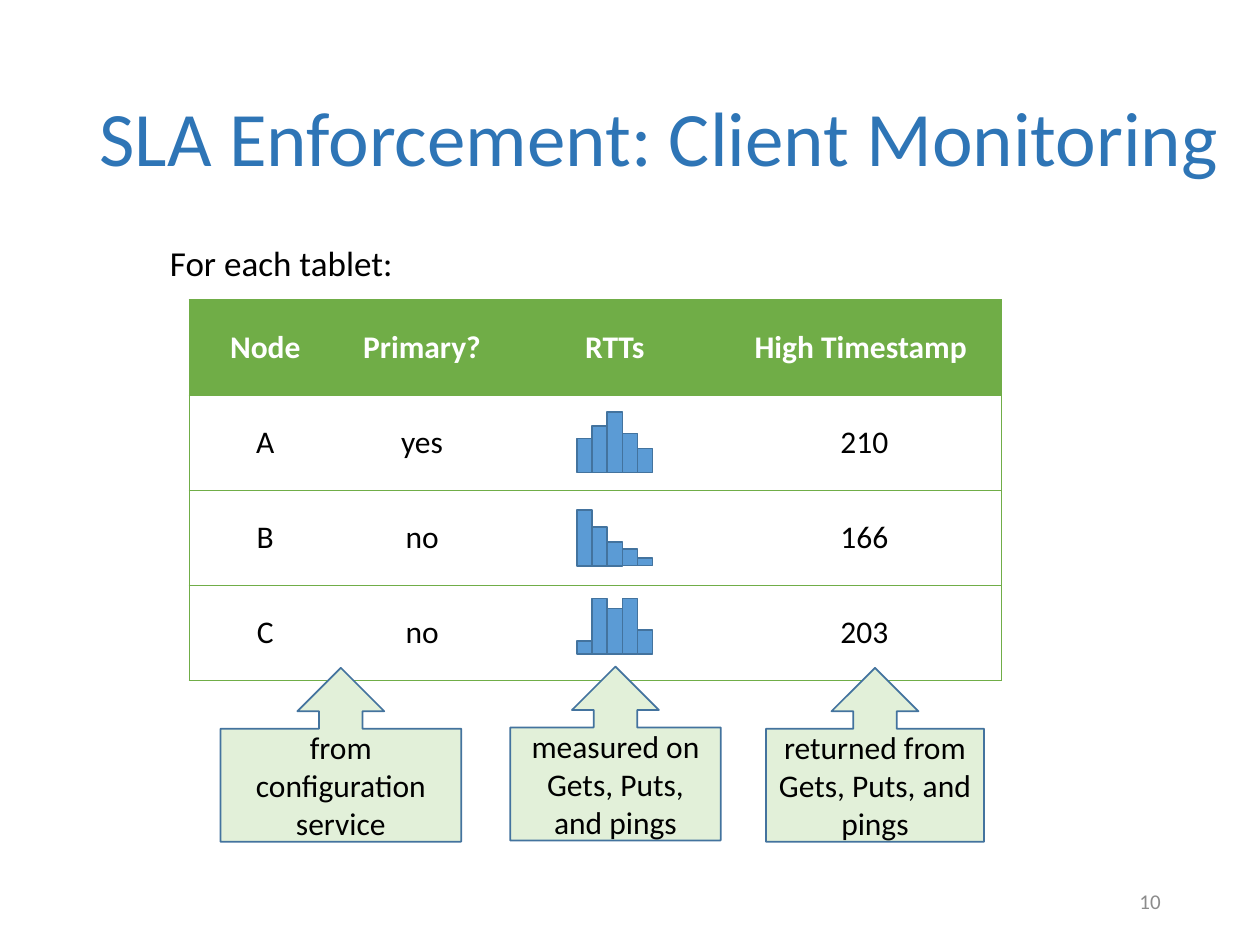
from dataclasses import dataclass
from lxml.etree import SubElement
from pptx import Presentation
from pptx.dml.color import RGBColor
from pptx.enum.shapes import MSO_SHAPE as Shape
from pptx.enum.text import MSO_ANCHOR as Anchor, PP_ALIGN as Align
from pptx.oxml import parse_xml
from pptx.oxml.ns import nsdecls, qn
from pptx.util import Inches, Pt


@dataclass(frozen=True)
class Theme:
    font: str = "Calibri"
    title: str = "2E75B6"
    text: str = "000000"
    white: str = "FFFFFF"
    muted: str = "8C8C8C"
    green: str = "70AD47"
    callout: str = "E2F0D9"
    bar: str = "5B9BD5"
    outline: str = "43739E"
    title_size: int = 44
    lead_size: int = 20
    body_size: int = 18
    small_size: int = 12


T = Theme()

ROWS = [
    ("Node", "Primary?", "RTTs", "High Timestamp "),
    ("A", "yes", "", "210"),
    ("B", "no", "", "166"),
    ("C", "no", "", "203"),
]
COL_WIDTHS = (1.21, 1.28, 1.78, 2.18)
BAR_WIDTH = 0.12
HISTOGRAMS = [
    (3.75, (0.27, 0.37, 0.48, 0.31, 0.19)),
    (4.49, (0.44, 0.31, 0.19, 0.13, 0.06)),
    (5.19, (0.1, 0.44, 0.36, 0.44, 0.19)),
]
CALLOUTS = [
    ("from configuration service", 1.75, 5.3, 1.91),
    ("measured on Gets, Puts, and pings", 4.05, 5.29, 1.67),
    ("returned from Gets, Puts, and pings", 6.08, 5.3, 1.73),
]


def rgb(color):
    return RGBColor.from_string(color)


def write(tf, text, size=T.body_size, color=T.text, bold=False,
          align=Align.LEFT, anchor=Anchor.MIDDLE, wrap=True, spacing=None):
    tf.word_wrap = wrap
    tf.vertical_anchor = anchor
    p = tf.paragraphs[0]
    p.alignment = align
    p.line_spacing = spacing
    r = p.add_run()
    r.text = text
    r.font.name = T.font
    r.font.size = Pt(size)
    r.font.bold = bold
    r.font.color.rgb = rgb(color)


def add_title(slide, text):
    sp = slide.shapes.title
    sp.left, sp.top = Inches(0.69), Inches(0.4)
    sp.width, sp.height = Inches(9.17), Inches(1.45)
    write(sp.text_frame, text, size=T.title_size, color=T.title, spacing=0.9)


def add_text(slide, text, left, top, width, height, **fmt):
    sp = slide.shapes.add_textbox(
        Inches(left), Inches(top), Inches(width), Inches(height))
    write(sp.text_frame, text, **fmt)


def add_box(shapes, kind, left, top, width, height, fill):
    sp = shapes.add_shape(
        kind, Inches(left), Inches(top), Inches(width), Inches(height))
    sp.shadow.inherit = False
    sp.fill.solid()
    sp.fill.fore_color.rgb = rgb(fill)
    sp.line.color.rgb = rgb(T.outline)
    sp.line.width = Pt(1)
    return sp


def set_borders(cell, visible):
    tc_pr = cell._tc.get_or_add_tcPr()
    for i, side in enumerate("LRTB"):
        ln = parse_xml(f'<a:ln{side} {nsdecls("a")} w="{Pt(0.5)}"/>')
        if side in visible:
            fill = SubElement(ln, qn("a:solidFill"))
            SubElement(fill, qn("a:srgbClr"), val=T.green)
        else:
            SubElement(ln, qn("a:noFill"))
        tc_pr.insert(i, ln)


def add_node_table(slide):
    last = len(COL_WIDTHS) - 1
    table = slide.shapes.add_table(
        len(ROWS), len(COL_WIDTHS), Inches(1.5), Inches(2.38),
        Inches(sum(COL_WIDTHS)), Inches(3.02)).table
    table.horz_banding = False
    for column, width in zip(table.columns, COL_WIDTHS):
        column.width = Inches(width)
    for i, row in enumerate(ROWS):
        header = i == 0
        for j, text in enumerate(row):
            cell = table.cell(i, j)
            cell.margin_left = cell.margin_right = Inches(0.13)
            cell.vertical_anchor = Anchor.MIDDLE
            cell.fill.solid()
            cell.fill.fore_color.rgb = rgb(T.green if header else T.white)
            set_borders(cell, "TB" + "L" * (j == 0) + "R" * (j == last))
            if text:
                write(cell.text_frame, text, bold=header, align=Align.CENTER,
                      color=T.white if header else T.text)


def add_histogram(slide, left, base, heights):
    group = slide.shapes.add_group_shape()
    for i, height in enumerate(heights):
        add_box(group.shapes, Shape.RECTANGLE, left + i * BAR_WIDTH,
                base - height, BAR_WIDTH, height, T.bar)


def add_callout(slide, text, left, top, width):
    sp = add_box(slide.shapes, Shape.UP_ARROW_CALLOUT,
                 left, top, width, 1.38, T.callout)
    write(sp.text_frame, text, align=Align.CENTER)


def main():
    prs = Presentation()
    prs.slide_width, prs.slide_height = Inches(10), Inches(7.5)
    slide = prs.slides.add_slide(prs.slide_layouts[5])
    add_title(slide, "SLA Enforcement: Client Monitoring")
    add_node_table(slide)
    add_text(slide, "10", 7.06, 6.95, 2.25, 0.4,
             size=T.small_size, color=T.muted, align=Align.RIGHT)
    add_text(slide, "For each tablet:", 1.25, 1.87, 1.99, 0.44,
             size=T.lead_size, anchor=Anchor.TOP, wrap=False)
    for base, heights in HISTOGRAMS:
        add_histogram(slide, 4.58, base, heights)
    for callout in CALLOUTS:
        add_callout(slide, *callout)
    prs.save("out.pptx")


if __name__ == "__main__":
    main()
